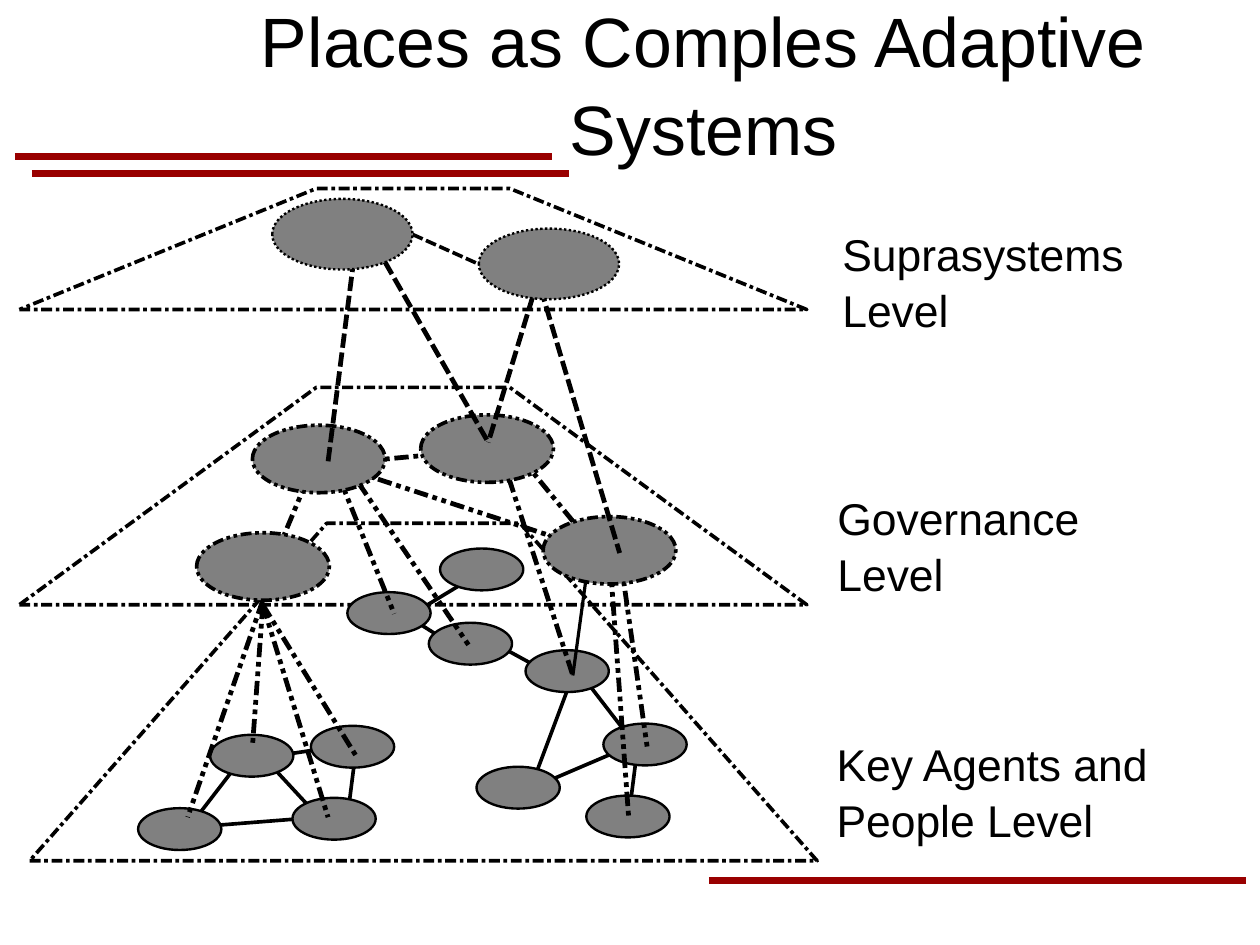
from lxml import etree
from pptx import Presentation
from pptx.dml.color import RGBColor
from pptx.enum.shapes import MSO_CONNECTOR, MSO_SHAPE
from pptx.enum.text import MSO_ANCHOR, PP_ALIGN
from pptx.oxml.ns import qn
from pptx.util import Cm, Pt

STRAIGHT = MSO_CONNECTOR.STRAIGHT
OVAL = MSO_SHAPE.OVAL
TOP, MIDDLE = MSO_ANCHOR.TOP, MSO_ANCHOR.MIDDLE
LEFT, CENTER = PP_ALIGN.LEFT, PP_ALIGN.CENTER

COLORS = {"ink": "000000", "node": "808080", "rule": "990000"}


class Deck:
    """Holds the style and the current slide."""

    font = "Arial"

    def __init__(self, width, height):
        self.prs = Presentation()
        self.prs.slide_width, self.prs.slide_height = Cm(width), Cm(height)
        self.s = self.prs.slides.add_slide(self.prs.slide_layouts[6])

    def color(self, name):
        return RGBColor.from_string(COLORS[name])

    def stroke(self, sp, width, dash=None, color="ink"):
        sp.line.color.rgb = self.color(color)
        sp.line.width = Pt(width)
        if dash:
            ln = sp._element.spPr.find(qn("a:ln"))
            etree.SubElement(ln, qn("a:prstDash"), val=dash)

    def line(self, x1, y1, x2, y2, width, dash=None, color="ink"):
        sp = self.s.shapes.add_connector(STRAIGHT, Cm(x1), Cm(y1), Cm(x2), Cm(y2))
        self.stroke(sp, width, dash, color)
        etree.SubElement(sp._element.spPr, qn("a:effectLst"))

    def links(self, ends, width, dash=None):
        for end in ends:
            self.line(*end, width, dash)

    def ovals(self, corners, w, h, width, dash=None):
        for x, y in corners:
            sp = self.s.shapes.add_shape(OVAL, Cm(x), Cm(y), Cm(w), Cm(h))
            sp.shadow.inherit = False
            sp.fill.solid()
            sp.fill.fore_color.rgb = self.color("node")
            self.stroke(sp, width, dash)

    def plane(self, x, top, bottom):
        corners = [(x + 17.5, bottom), (x + 10.9, top), (x + 6.6, top)]
        builder = self.s.shapes.build_freeform(Cm(x), Cm(bottom))
        builder.add_line_segments([(Cm(a), Cm(b)) for a, b in corners])
        sp = builder.convert_to_shape()
        sp.shadow.inherit = False
        sp.fill.background()
        self.stroke(sp, 2.3, "sysDashDot")

    def text(self, lines, x, y, w, h, size, align=LEFT, anchor=TOP, inset=(0.25, 0.13)):
        tf = self.s.shapes.add_textbox(Cm(x), Cm(y), Cm(w), Cm(h)).text_frame
        side, edge = Cm(inset[0]), Cm(inset[1])
        frame = {"word_wrap": True, "vertical_anchor": anchor,
                 "margin_left": side, "margin_right": side,
                 "margin_top": edge, "margin_bottom": edge}
        for name, value in frame.items():
            setattr(tf, name, value)
        for i, line in enumerate(lines):
            p = tf.add_paragraph() if i else tf.paragraphs[0]
            p.alignment, p.line_spacing = align, 1.05
            r = p.add_run()
            r.text = line
            for name, value in {"name": self.font, "size": Pt(size)}.items():
                setattr(r.font, name, value)
            r.font.color.rgb = self.color("ink")


RULES = [(15.75, 19.56), (0.71, 3.86), (0.33, 3.48)]
LABELS = [
    (["Suprasystems", "Level"], 18.47, 4.85),
    (["Governance", "Level"], 18.36, 10.72),
    (["Key Agents and", "People Level"], 18.34, 16.18),
]
PLANES = [(0.43, 4.19, 6.88), (0.43, 8.61, 13.44), (0.66, 11.63, 19.13)]

AGENTS = [
    (4.67, 16.33), (6.5, 17.73), (3.07, 17.96), (6.91, 16.13),
    (11.68, 14.45), (13.03, 17.68), (10.59, 17.04), (13.41, 16.08),
    (7.72, 13.16), (9.78, 12.19), (9.53, 13.84),
]
AGENT_LINKS = [
    (10.64, 12.75, 9.17, 13.64), (8.97, 13.64, 10.41, 14.55),
    (11.05, 14.33, 12.29, 15.01), (12.93, 15.01, 13.97, 16.36),
    (11.89, 17.25, 12.73, 15.01), (11.89, 17.48, 13.97, 16.59),
    (13.97, 18.16, 14.17, 16.59), (7.92, 16.59, 7.72, 18.16),
    (7.09, 18.16, 5.84, 16.81), (4.37, 18.16, 5.41, 16.81),
    (6.05, 16.81, 7.49, 16.59), (7.09, 18.16, 4.17, 18.39),
]

GOVERNORS = [(12.07, 11.48), (4.37, 11.84), (9.35, 9.22)]
LEAD_GOVERNOR = (5.61, 9.45)
GOVERNOR_LINKS = [
    (5.84, 13.44, 5.61, 16.59), (5.84, 13.44, 7.92, 16.81),
    (5.84, 13.34, 4.17, 18.16), (5.84, 13.44, 7.29, 18.16),
    (6.05, 12.52, 7.09, 10.03), (7.92, 10.26, 10.41, 10.03),
    (11.46, 10.03, 13.13, 12.07), (12.73, 12.07, 7.92, 10.49),
    (7.49, 10.49, 8.76, 13.64), (11.05, 9.83, 12.73, 15.01),
    (13.77, 12.29, 14.38, 16.59), (13.56, 12.52, 13.97, 18.16),
]
LEAD_LINK = (7.49, 10.03, 10.41, 14.33)
THIN_LINK = (13.13, 12.07, 12.73, 15.01)

SUPRASYSTEMS = [(6.05, 4.42), (10.64, 5.08)]
SUPRASYSTEM_LINKS = [
    (7.92, 5.31, 7.29, 10.26), (8.13, 5.08, 10.85, 9.83),
    (12.09, 5.77, 10.85, 9.83), (11.89, 5.99, 13.77, 12.29),
]


def main():
    deck = Deck(28, 21)

    # Red rules and title
    for x, y in RULES:
        deck.line(x, y, x + 11.94, y, 4.5, color="rule")
    deck.text(["Places as Comples Adaptive Systems"], 3.86, 0.84, 23.57, 1.96, 44,
              CENTER, MIDDLE, (0, 0))

    # Level labels and planes
    deck.links(AGENT_LINKS, 2.3)
    for lines, x, y in LABELS:
        deck.text(lines, x, y, 7.5, 2.54, 28)
    for plane in PLANES:
        deck.plane(*plane)
    deck.line(9.17, 5.21, 10.64, 5.87, 2.3, "sysDash")

    # Key agents
    deck.ovals(AGENTS, 1.85, 0.93, 1.5)

    # Governance
    governor = (2.95, 1.5, 2.3, "sysDashDotDot")
    deck.links(GOVERNOR_LINKS, 3, "sysDashDotDot")
    deck.line(*THIN_LINK, 0)
    deck.ovals(GOVERNORS, *governor)
    deck.line(*LEAD_LINK, 3, "sysDashDotDot")
    deck.ovals([LEAD_GOVERNOR], *governor)

    # Suprasystems
    deck.links(SUPRASYSTEM_LINKS, 3, "sysDash")
    deck.ovals(SUPRASYSTEMS, 3.12, 1.57, 1.5, "sysDot")

    deck.prs.save("out.pptx")


if __name__ == "__main__":
    main()
